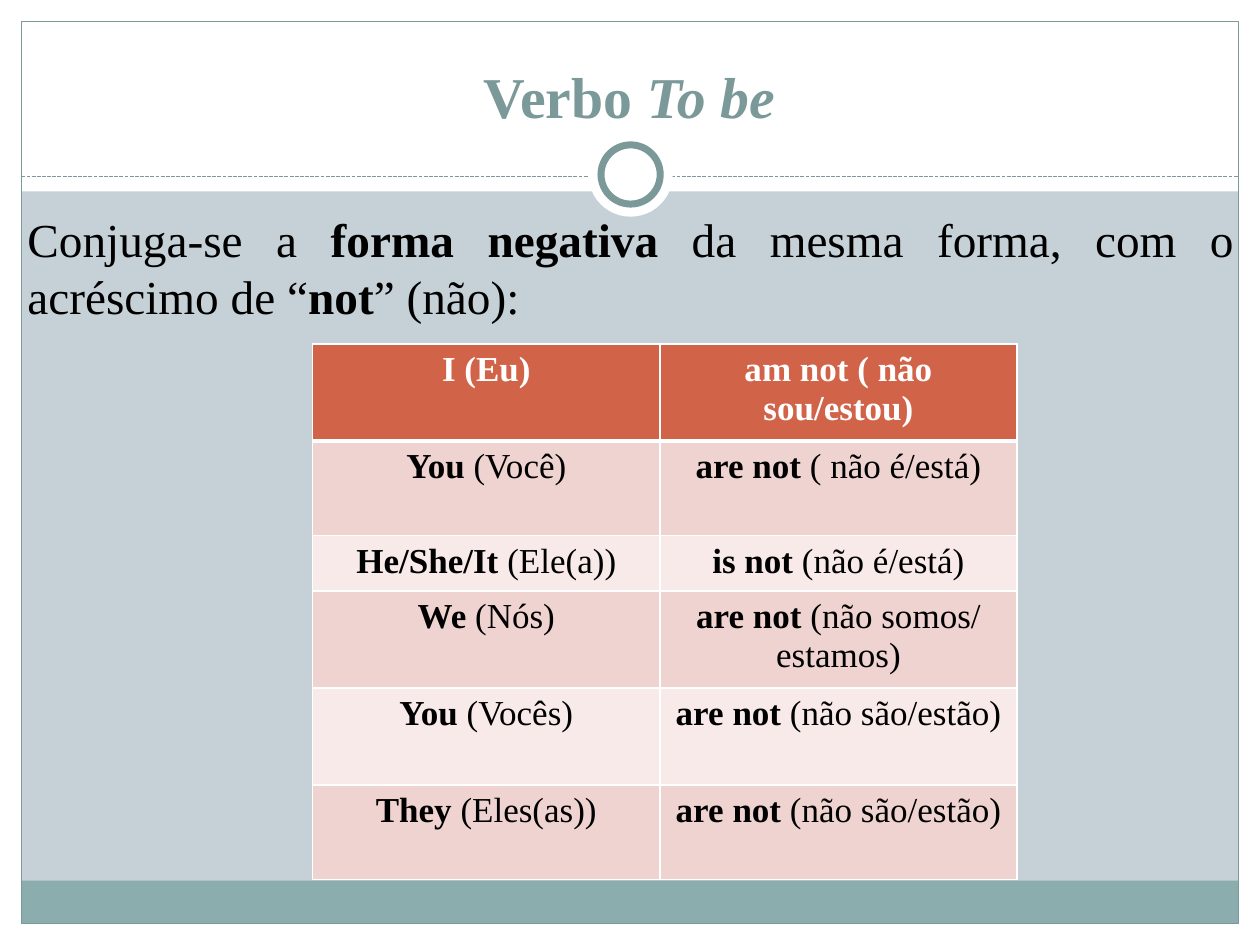
from dataclasses import dataclass

import pptx
import pptx.dml.color
import pptx.enum.dml
import pptx.enum.shapes
import pptx.enum.text
import pptx.oxml
import pptx.oxml.ns
import pptx.util

Inches = pptx.util.Inches
Pt = pptx.util.Pt
Shape = pptx.enum.shapes.MSO_SHAPE
Align = pptx.enum.text.PP_ALIGN
qn = pptx.oxml.ns.qn


def color(code):
    return pptx.dml.color.RGBColor.from_string(code)


@dataclass(frozen=True)
class Theme:
    font: str = "Times New Roman"
    back: str = "C5D1D7"
    white: str = "FFFFFF"
    black: str = "000000"
    accent: str = "7C999A"
    foot: str = "8CADAE"
    head: str = "D16349"
    bands: tuple = ("EED3D0", "F7EAE9")
    title: float = 33
    body: float = 27
    cell: float = 20


THEME = Theme()

ROWS = [
    ("I (Eu)", "", "am not ( não sou/estou)", ""),
    ("You", " (Você)", "are not", " ( não é/está)"),
    ("He/She/It", " (Ele(a))", "is not", " (não é/está)"),
    ("We", " (Nós)", "are not", " (não somos/ estamos)"),
    ("You", " (Vocês)", "are not", " (não são/estão)"),
    ("They", " (Eles(as))", "are not", " (não são/estão)"),
]
WIDTHS = (2.76, 2.83)
HEIGHTS = (0.77, 0.75, 0.44, 0.77, 0.77, 0.75)


def add_shape(slide, kind, box, fill=None, line=None, weight=0.75):
    shape = slide.shapes.add_shape(kind, *map(Inches, box))
    shape.shadow.inherit = False
    if fill:
        shape.fill.solid()
        shape.fill.fore_color.rgb = color(fill)
    else:
        shape.fill.background()
    if line:
        shape.line.color.rgb = color(line)
        shape.line.width = Pt(weight)
    else:
        shape.line.fill.background()


def add_ring(slide, box):
    left, top, side, _ = box
    gap = 0.1
    inner = (left + gap, top + gap, side - 2 * gap, side - 2 * gap)
    add_shape(slide, Shape.OVAL, box, THEME.white)
    add_shape(slide, Shape.OVAL, inner, THEME.white, THEME.accent, 4)


def add_frame(slide, box):
    left, top, width, height = box
    edge = 0.17
    right, base = left + width, top + height
    sides = [
        (left, base - edge, width, edge),
        (left, top, width, 1.52),
        (left, top, edge, height),
        (right - edge, top, edge, height),
    ]
    for side in sides:
        add_shape(slide, Shape.RECTANGLE, side, THEME.white)
    inner = (left + edge, top + edge, width - 2 * edge, height - 2 * edge)
    foot = (left + edge, base - 0.51, width - 2 * edge, 0.34)
    add_shape(slide, Shape.RECTANGLE, foot, THEME.foot)
    add_shape(slide, Shape.RECTANGLE, inner, line=THEME.accent)

    rule = slide.shapes.add_connector(
        pptx.enum.shapes.MSO_CONNECTOR.STRAIGHT,
        Inches(left + edge), Inches(top + 1.4),
        Inches(right - edge), Inches(top + 1.4))
    rule.line.color.rgb = color(THEME.accent)
    rule.line.width = Pt(0.75)
    rule.line.dash_style = pptx.enum.dml.MSO_LINE.SQUARE_DOT
    rule.line._get_or_add_ln().find(qn("a:prstDash")).set("val", "sysDash")
    pptx.oxml.xmlchemy.OxmlElement
    rule._element.spPr.append(pptx.oxml.xmlchemy.OxmlElement("a:effectLst"))
    add_ring(slide, (left + width / 2 - 0.33, top + 1.05, 0.67, 0.67))


def set_text(part, runs, size, tint, align):
    part.alignment = align
    part.font.name = THEME.font
    part.font.size = Pt(size)
    part.font.color.rgb = color(tint)
    for text, bold, slant in runs:
        if text:
            run = part.add_run()
            run.text = text
            run.font.bold = bold
            run.font.italic = slant


def add_text(slide, box, runs, size, tint, align, anchor):
    frame = slide.shapes.add_textbox(*map(Inches, box)).text_frame
    frame.word_wrap = True
    frame.vertical_anchor = anchor
    part = frame.paragraphs[0]
    set_text(part, runs, size, tint, align)
    return part


def add_title(slide, box):
    runs = [("Verbo ", True, False), ("To be", True, True)]
    add_text(slide, box, runs, THEME.title, THEME.accent, Align.CENTER,
             pptx.enum.text.MSO_ANCHOR.BOTTOM)


def add_body(slide, box):
    runs = [
        ("Conjuga-se a ", False, False),
        ("forma negativa ", True, False),
        ("da mesma forma, com o acréscimo de “", False, False),
        ("not", True, False),
        ("” (não):", False, False),
    ]
    part = add_text(slide, box, runs, THEME.body, THEME.black, Align.JUSTIFY,
                    pptx.enum.text.MSO_ANCHOR.TOP)
    part.space_before = Pt(0.2 * THEME.body)


def set_edge(cell, side, weight):
    props = cell._tc.get_or_add_tcPr()
    edge = pptx.oxml.parse_xml(
        f'<a:{side} xmlns:a="{pptx.oxml.ns.nsdecls("a").split(chr(34))[1]}" '
        f'w="{Pt(weight)}"><a:solidFill><a:srgbClr val="{THEME.white}"/>'
        f'</a:solidFill></a:{side}>')
    props.append(edge)


def add_cell(cell, row, runs):
    head = row == 0
    tint = THEME.white if head else THEME.black
    fill = THEME.head if head else THEME.bands[(row - 1) % 2]
    set_text(cell.text_frame.paragraphs[0], runs, THEME.cell, tint,
             Align.CENTER)
    for side in ("lnL", "lnR", "lnT", "lnB"):
        thick = (side == "lnB" and head) or (side == "lnT" and row == 1)
        set_edge(cell, side, 3 if thick else 1)
    cell.fill.solid()
    cell.fill.fore_color.rgb = color(fill)


def add_verbs(slide, box):
    table = slide.shapes.add_table(
        len(ROWS), len(WIDTHS), *map(Inches, box)).table
    for col, width in zip(table.columns, WIDTHS):
        col.width = Inches(width)
    for row, height in zip(table.rows, HEIGHTS):
        row.height = Inches(height)
    for row, words in enumerate(ROWS):
        for col in range(len(WIDTHS)):
            strong, plain = words[2 * col:2 * col + 2]
            runs = [(strong, True, False), (plain, False, False)]
            add_cell(table.cell(row, col), row, runs)


def main():
    deck = pptx.Presentation()
    deck.slide_width = Inches(10)
    deck.slide_height = Inches(7.5)
    slide = deck.slides.add_slide(deck.slide_layouts[6])
    slide.background.fill.solid()
    slide.background.fill.fore_color.rgb = color(THEME.back)
    add_frame(slide, (0, 0, 10, 7.5))
    add_title(slide, (0.33, 0.25, 9.33, 0.83))
    add_body(slide, (0.12, 1.62, 9.77, 5.7))
    add_verbs(slide, (2.48, 2.73, sum(WIDTHS), sum(HEIGHTS)))
    deck.save("out.pptx")


if __name__ == "__main__":
    main()
